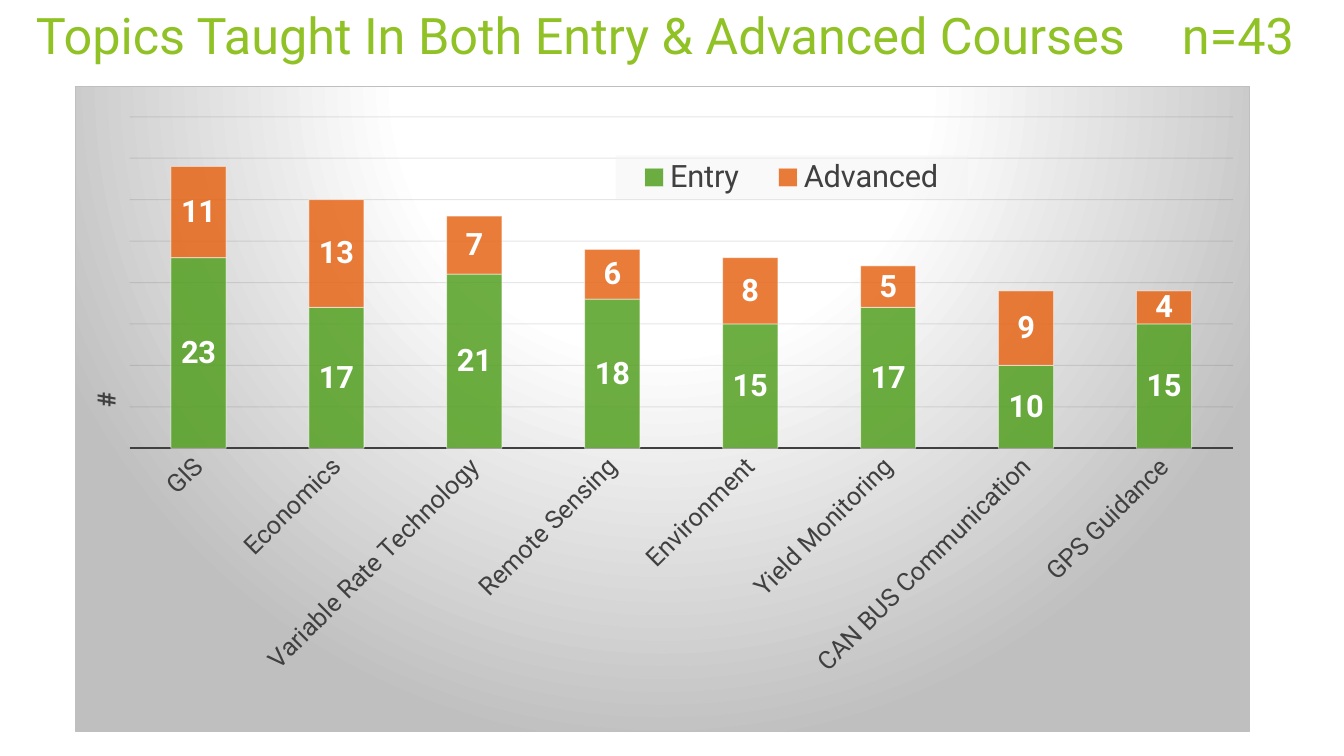
from lxml.etree import SubElement
from pptx import Presentation
from pptx.chart.data import CategoryChartData
from pptx.dml.color import RGBColor
from pptx.enum.chart import XL_CHART_TYPE as ChartType, XL_LABEL_POSITION as LabelPosition
from pptx.enum.chart import XL_LEGEND_POSITION as LegendPosition, XL_TICK_MARK as TickMark
from pptx.enum.text import MSO_ANCHOR
from pptx.oxml import parse_xml
from pptx.oxml.ns import nsdecls, qn
from pptx.util import Pt

PX = 914400 / 100.8
FONT = "Roboto"
GREEN = "90C226"
DARK = "404040"
WHITE = "FFFFFF"
GRAY = "BFBFBF"


def paint(target, color, size=None, alpha=None):
    if size:
        target.name, target.size = FONT, Pt(size)
        target = target.fill
    target.solid()
    target.fore_color.rgb = RGBColor.from_string(color)
    if alpha:
        color_element = target._xPr.find(qn("a:solidFill"))[0]
        SubElement(color_element, qn("a:alpha")).set("val", str(alpha * 1000))


def set_layout(parent, index, **values):
    for old_layout in parent.findall(qn("c:layout")):
        parent.remove(old_layout)
    layout = parse_xml(f'<c:layout {nsdecls("c")}><c:manualLayout/></c:layout>')
    for tag, value in values.items():
        SubElement(layout[0], qn(f"c:{tag}")).set("val", str(value))
    parent.insert(index, layout)


presentation = Presentation()
presentation.slide_width = round(1344 * PX)
presentation.slide_height = round(756 * PX)
slide = presentation.slides.add_slide(presentation.slide_layouts[6])

chart_data = CategoryChartData()
chart_data.categories = [
    "GIS", "Economics", "Variable Rate Technology", "Remote Sensing",
    "Environment", "Yield Monitoring", "CAN BUS Communication", "GPS Guidance",
]
chart_data.add_series("Entry", [23, 17, 21, 18, 15, 17, 10, 15])
chart_data.add_series("Advanced", [11, 13, 7, 6, 8, 5, 9, 4])
chart_box = [round(length * PX) for length in (75, 86, 1175, 646)]
chart = slide.shapes.add_chart(ChartType.COLUMN_STACKED, *chart_box, chart_data).chart
chart.has_title = False
paint(chart.font, "000000", 10)

plot = chart.plots[0]
plot.gap_width = 150
plot.overlap = 100
plot.vary_by_categories = False
for series, color in zip(plot.series, ("54A021", "E76618")):
    paint(series.format.fill, color, alpha=85)
    paint(series.format.line.fill, WHITE, alpha=50)
    series.format.line.width = Pt(0.75)
    labels = series.data_labels
    labels.show_value = True
    labels.position = LabelPosition.CENTER
    paint(labels.font, WHITE, 22)
    labels.font.bold = True

category_axis = chart.category_axis
category_axis.major_tick_mark = TickMark.NONE
paint(category_axis.tick_labels.font, DARK, 18)
paint(category_axis.format.line.fill, DARK)
category_axis.format.line.width = Pt(1.5)
category_body = category_axis._element.find(qn("c:txPr")).find(qn("a:bodyPr"))
category_body.set("rot", "-2700000")
category_body.set("vert", "horz")

value_axis = chart.value_axis
value_axis.minimum_scale = 0
value_axis.maximum_scale = 40
value_axis.major_unit = 5
value_axis.visible = False
gridline = value_axis.major_gridlines.format.line
paint(gridline.fill, "0D0D0D", alpha=10)
gridline.width = Pt(0.75)
axis_title = value_axis.axis_title
axis_title.text_frame.text = "#"
title_font = axis_title.text_frame.paragraphs[0].runs[0].font
paint(title_font, DARK, 18)
title_font.bold = True
title_body = axis_title._element.find(".//" + qn("a:bodyPr"))
title_body.set("rot", "-5400000")
title_body.set("vert", "horz")

chart.has_legend = True
legend = chart.legend
legend.position = LegendPosition.TOP
legend.include_in_layout = False
paint(legend.font, DARK, 22)
legend._element.find(qn("c:overlay")).addnext(parse_xml(
    f'<c:spPr {nsdecls("c", "a")}><a:solidFill><a:srgbClr val="F2F2F2">'
    '<a:alpha val="39000"/></a:srgbClr></a:solidFill><a:ln><a:noFill/></a:ln></c:spPr>'
))

set_layout(chart.element.find(".//" + qn("c:plotArea")), 0, layoutTarget="inner",
           xMode="edge", yMode="edge", x=0.046, y=0.047, w=0.94, h=0.514)
set_layout(legend._element, 1, xMode="edge", yMode="edge", x=0.46, y=0.107, w=0.3, h=0.068)
set_layout(axis_title._element, 1, xMode="edge", yMode="edge", x=0.008, y=0.467)

stops = "".join(
    f'<a:gs pos="{position * 1000}"><a:srgbClr val="{color}"/></a:gs>'
    for position, color in ((0, WHITE), (39, WHITE), (100, GRAY))
)
chart.element.find(qn("c:chart")).addnext(parse_xml(
    f'<c:spPr {nsdecls("c", "a")}><a:gradFill><a:gsLst>{stops}</a:gsLst><a:path path="circle">'
    '<a:fillToRect l="50000" t="-80000" r="50000" b="180000"/></a:path></a:gradFill>'
    f'<a:ln w="9525"><a:solidFill><a:srgbClr val="{GRAY}"/></a:solidFill></a:ln></c:spPr>'
))

title_box = [round(length * PX) for length in (26, -1, 1284, 145)]
title_frame = slide.shapes.add_textbox(*title_box).text_frame
title_frame.word_wrap = True
title_frame.vertical_anchor = MSO_ANCHOR.TOP
title_frame.margin_right = 0
title_frame.text = "Topics Taught In Both Entry & Advanced Courses\tn=43"
title = title_frame.paragraphs[0]
paint(title.runs[0].font, GREEN, 36)
tab_list = SubElement(title._p.get_or_add_pPr(), qn("a:tabLst"))
tab_stop = SubElement(tab_list, qn("a:tab"))
tab_stop.set("pos", str(round(1146 * PX)))
tab_stop.set("algn", "l")

presentation.save("out.pptx")
